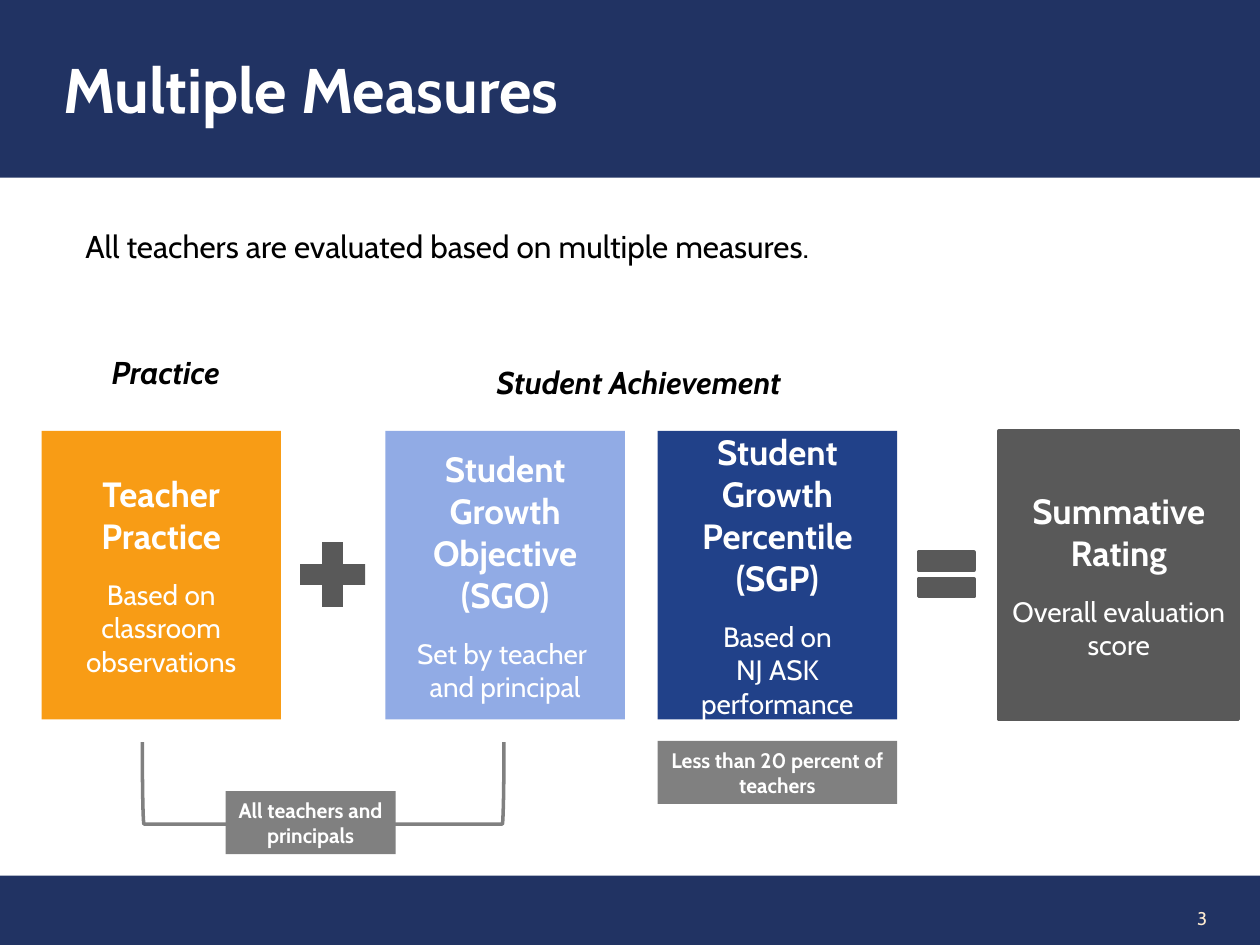
from pptx import Presentation
from pptx.dml.color import RGBColor
from pptx.enum.shapes import MSO_SHAPE
from pptx.enum.text import MSO_ANCHOR, MSO_AUTO_SIZE, PP_ALIGN
from pptx.util import Inches, Pt

RECT, PLUS, EQUAL = MSO_SHAPE.RECTANGLE, MSO_SHAPE.MATH_PLUS, MSO_SHAPE.MATH_EQUAL
BRACKET = MSO_SHAPE.LEFT_BRACKET
LEFT, CENTER, RIGHT = PP_ALIGN.LEFT, PP_ALIGN.CENTER, PP_ALIGN.RIGHT
TOP, MIDDLE = MSO_ANCHOR.TOP, MSO_ANCHOR.MIDDLE
FIXED, GROW = MSO_AUTO_SIZE.NONE, MSO_AUTO_SIZE.SHAPE_TO_FIT_TEXT

FONT = "Cabin"
NAVY, ORANGE, SKY, BLUE = "213363", "F89C15", "91ABE5", "214189"
DARK, GRAY, WHITE, BLACK, CREAM = "595959", "808080", "FFFFFF", "000000", "FEEBD0"

CARD_TOP, CARD_W, CARD_H = 3.42, 1.9, 2.29
SGP_LEFT = 5.22


def rgb(value):
    return RGBColor.from_string(value)


def write(p, text, size=18, color=WHITE, bold=False, italic=False, align=CENTER, after=0):
    """Fill a paragraph; each newline in the text becomes a line break."""
    p.alignment = align
    p.space_after = Pt(after)
    for i, line in enumerate(text.split("\n")):
        if i:
            p.add_line_break()
        r = p.add_run()
        r.text = line
        r.font.name, r.font.size = FONT, Pt(size)
        r.font.bold, r.font.italic = bold, italic
        r.font.color.rgb = rgb(color)


def set_frame(tf, anchor=MIDDLE, fit=FIXED, left=0.1, right=0.1):
    tf.word_wrap = True
    tf.auto_size = fit
    tf.vertical_anchor = anchor
    tf.margin_left, tf.margin_right = Inches(left), Inches(right)
    tf.margin_top = tf.margin_bottom = Inches(0.05)


class SlideBuilder:
    def __init__(self, s):
        self.s = s

    def shape(self, kind, x, y, w, h, fill=None, line=None):
        sp = self.s.shapes.add_shape(kind, Inches(x), Inches(y), Inches(w), Inches(h))
        sp.shadow.inherit = False
        if fill:
            sp.fill.solid()
            sp.fill.fore_color.rgb = rgb(fill)
        else:
            sp.fill.background()
        if line:
            sp.line.color.rgb = rgb(line)
            sp.line.width = Pt(2)
        else:
            sp.line.fill.background()
        return sp

    def title(self, text):
        sp = self.s.shapes.title
        sp.left, sp.top, sp.width, sp.height = 0, 0, Inches(10), Inches(1.41)
        sp.fill.solid()
        sp.fill.fore_color.rgb = rgb(NAVY)
        set_frame(sp.text_frame, left=0.5)
        write(sp.text_frame.paragraphs[0], text, size=36, bold=True, align=LEFT)

    def label(self, text, x, y, w, h=0.4, anchor=TOP, fit=GROW, **style):
        sp = self.s.shapes.add_textbox(Inches(x), Inches(y), Inches(w), Inches(h))
        set_frame(sp.text_frame, anchor, fit)
        write(sp.text_frame.paragraphs[0], text, **style)

    def card(self, x, fill, heading, detail, inset, line=None):
        tf = self.shape(RECT, x, CARD_TOP, CARD_W, CARD_H, fill, line).text_frame
        set_frame(tf, left=inset, right=inset)
        write(tf.paragraphs[0], heading, size=20, bold=True, after=12)
        write(tf.add_paragraph(), detail, size=16)

    def tag(self, text, x, y, w):
        tf = self.shape(RECT, x, y, w, 0.5, GRAY).text_frame
        set_frame(tf, TOP, GROW)
        write(tf.paragraphs[0], text, size=12, bold=True)


def main():
    prs = Presentation()
    prs.slide_width, prs.slide_height = Inches(10), Inches(7.5)
    b = SlideBuilder(prs.slides.add_slide(prs.slide_layouts[5]))

    b.shape(RECT, 0, 6.95, 10.02, 0.59, NAVY)
    b.label("3", 8.22, 7.09, 1.46, anchor=MIDDLE, fit=FIXED, size=10.5, color=CREAM, align=RIGHT)
    b.title("Multiple Measures")

    b.card(0.33, ORANGE, "Teacher\nPractice", "Based on classroom observations", 0.05)
    b.card(SGP_LEFT, BLUE, "Student Growth Percentile (SGP)",
           "Based on\nNJ ASK performance", 0.03)
    b.card(3.06, SKY, "Student Growth Objective\n(SGO)",
           "Set by teacher \nand principal", 0.03)
    b.shape(EQUAL, 7.21, 4.26, 0.6, 0.6, DARK, DARK)
    b.shape(PLUS, 2.29, 4.21, 0.7, 0.7, DARK)
    b.card(7.93, DARK, "Summative Rating", "Overall evaluation score", 0, line=DARK)

    bracket = b.shape(BRACKET, 2.24, 4.78, 0.65, 2.87, line=GRAY)
    bracket.rotation = 270
    bracket.adjustments[0] = 0.02
    b.tag("All teachers and principals", 1.79, 6.28, 1.35)
    b.tag("Less than 20 percent of teachers", SGP_LEFT, 5.88, CARD_W)

    heading = {"color": BLACK, "bold": True, "italic": True}
    b.label("Practice", 0.37, 2.75, 1.89, **heading)
    b.label("Student Achievement", 3.04, 2.83, 4.06, **heading)
    b.label("All teachers are evaluated based on multiple measures.",
            0.58, 1.75, 7.5, color=BLACK, align=LEFT)

    prs.save("out.pptx")


if __name__ == "__main__":
    main()
